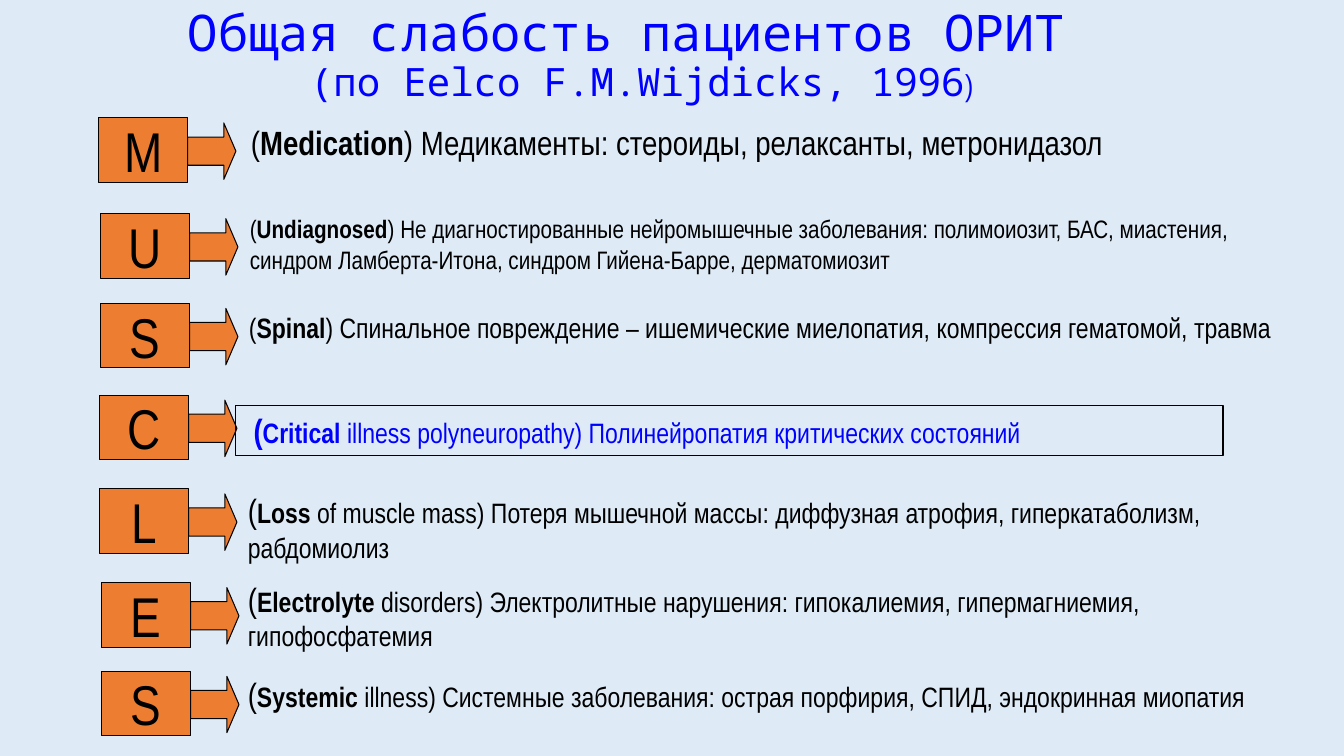
from dataclasses import dataclass

from pptx import Presentation
from pptx import util as u
from pptx.dml import color as c
from pptx.enum import shapes, text


@dataclass(frozen=True)
class Theme:
    back: c.RGBColor = c.RGBColor.from_string("DEEBF7")
    fill: c.RGBColor = c.RGBColor.from_string("ED7D31")
    ink: c.RGBColor = c.RGBColor.from_string("000000")
    blue: c.RGBColor = c.RGBColor.from_string("0000FF")
    body: str = "Arial Narrow"
    mono: str = "Noto Sans Mono"
    head: float = 36
    sub: float = 27.9
    tail: float = 21.6
    letter: float = 40
    large: float = 24
    mid: float = 20
    small: float = 18
    line: float = 0.75


T = Theme()

ROWS = [
    ("М", (0.98, 1.17), (2.39, 1.16, 9.74, 0.91), T.large, T.large, "(", "Medication",
     ") Медикаменты: стероиды, релаксанты, метронидазол"),
    ("U", (1, 2.12), (2.38, 2.07, 10.38, 0.71), T.small, T.small, "(", "Undiagnosed",
     ") Не диагностированные нейромышечные заболевания: полимоиозит, БАС, миастения, "
     "синдром Ламберта-Итона, синдром Гийена-Барре, дерматомиозит"),
    ("S", (1, 3.01), (2.37, 3.03, 10.96, 0.77), T.mid, T.mid, "(", "Spinal",
     ") Спинальное повреждение – ишемические миелопатия, компрессия гематомой, травма"),
    ("C", (0.99, 3.92), (2.34, 4.02, 9.79, 0.5), T.large, T.mid, " (", "Critical ",
     "illness polyneuropathy) Полинейропатия критических состояний"),
    ("L", (0.99, 4.85), (2.36, 4.81, 10.61, 0.84), T.large, T.mid, "(", "Loss",
     " of muscle mass) Потеря мышечной массы: диффузная атрофия, гиперкатаболизм, рабдомиолиз"),
    ("E", (1.01, 5.78), (2.36, 5.69, 10.82, 0.84), T.large, T.mid, "(", "Electrolyte",
     " disorders) Электролитные нарушения: гипокалиемия, гипермагниемия, гипофосфатемия"),
    ("S", (1.01, 6.66), (2.36, 6.64, 10.96, 0.84), T.large, T.mid, "(", "Systemic",
     " illness) Системные заболевания: острая порфирия, СПИД, эндокринная миопатия"),
]


def inches(box):
    return [u.Inches(n) for n in box]


def add_run(para, words, size, bold=None, face=None):
    run = para.add_run()
    run.text = words
    run.font.size = u.Pt(size)
    run.font.bold = bold
    if face:
        run.font.name = face


def add_block(slide, kind, box, fill=None):
    shape = slide.shapes.add_shape(kind, *inches(box))
    shape.shadow.inherit = False
    if fill is None:
        shape.fill.background()
    else:
        shape.fill.solid()
        shape.fill.fore_color.rgb = fill
    shape.line.color.rgb = T.ink
    shape.line.width = u.Pt(T.line)
    return shape


def add_title(slide, box):
    frame = slide.shapes.add_textbox(*inches(box)).text_frame
    frame.word_wrap = True
    frame.vertical_anchor = text.MSO_ANCHOR.MIDDLE
    para = frame.paragraphs[0]
    para.alignment = text.PP_ALIGN.CENTER
    para.line_spacing = 0.9
    para.font.color.rgb = T.blue
    add_run(para, "Общая слабость пациентов ОРИТ ", T.head, face=T.mono)
    para.add_line_break()
    add_run(para, "(по Eelco F.M.Wijdicks, 1996", T.sub, face=T.mono)
    add_run(para, ")", T.tail, face=T.body)


def add_letter(slide, spot, letter):
    left, top = spot
    tile = add_block(slide, shapes.MSO_SHAPE.RECTANGLE, (left, top, 0.88, 0.64), T.fill)
    frame = tile.text_frame
    frame.word_wrap = False
    frame.vertical_anchor = text.MSO_ANCHOR.MIDDLE
    para = frame.paragraphs[0]
    para.text = letter
    para.alignment = text.PP_ALIGN.CENTER
    para.font.name = T.body
    para.font.size = u.Pt(T.letter)
    para.font.color.rgb = T.ink
    arrow = add_block(slide, shapes.MSO_SHAPE.RIGHT_ARROW,
                      (left + 0.88, top + 0.05, 0.48, 0.56), T.fill)
    arrow.adjustments[0] = 0.5
    arrow.adjustments[1] = 0.25


def add_cause(slide, box, first, size, mark, term, rest, framed):
    if framed:
        shape = add_block(slide, shapes.MSO_SHAPE.RECTANGLE, box)
    else:
        shape = slide.shapes.add_textbox(*inches(box))
    frame = shape.text_frame
    frame.word_wrap = True
    frame.auto_size = text.MSO_AUTO_SIZE.SHAPE_TO_FIT_TEXT
    frame.vertical_anchor = text.MSO_ANCHOR.TOP
    para = frame.paragraphs[0]
    para.alignment = text.PP_ALIGN.LEFT
    para.font.name = T.body
    para.font.color.rgb = T.blue if framed else T.ink
    add_run(para, mark, first, framed)
    add_run(para, term, size, True)
    add_run(para, rest, size, False)


def main():
    deck = Presentation()
    deck.slide_width, deck.slide_height = inches((13.33, 7.5))
    slide = deck.slides.add_slide(deck.slide_layouts[6])
    slide.background.fill.solid()
    slide.background.fill.fore_color.rgb = T.back
    add_title(slide, (0.6, 0.17, 11.53, 0.78))
    for letter, spot, box, first, size, mark, term, rest in ROWS:
        add_letter(slide, spot, letter)
        add_cause(slide, box, first, size, mark, term, rest, letter == "C")
    deck.save("out.pptx")


if __name__ == "__main__":
    main()
